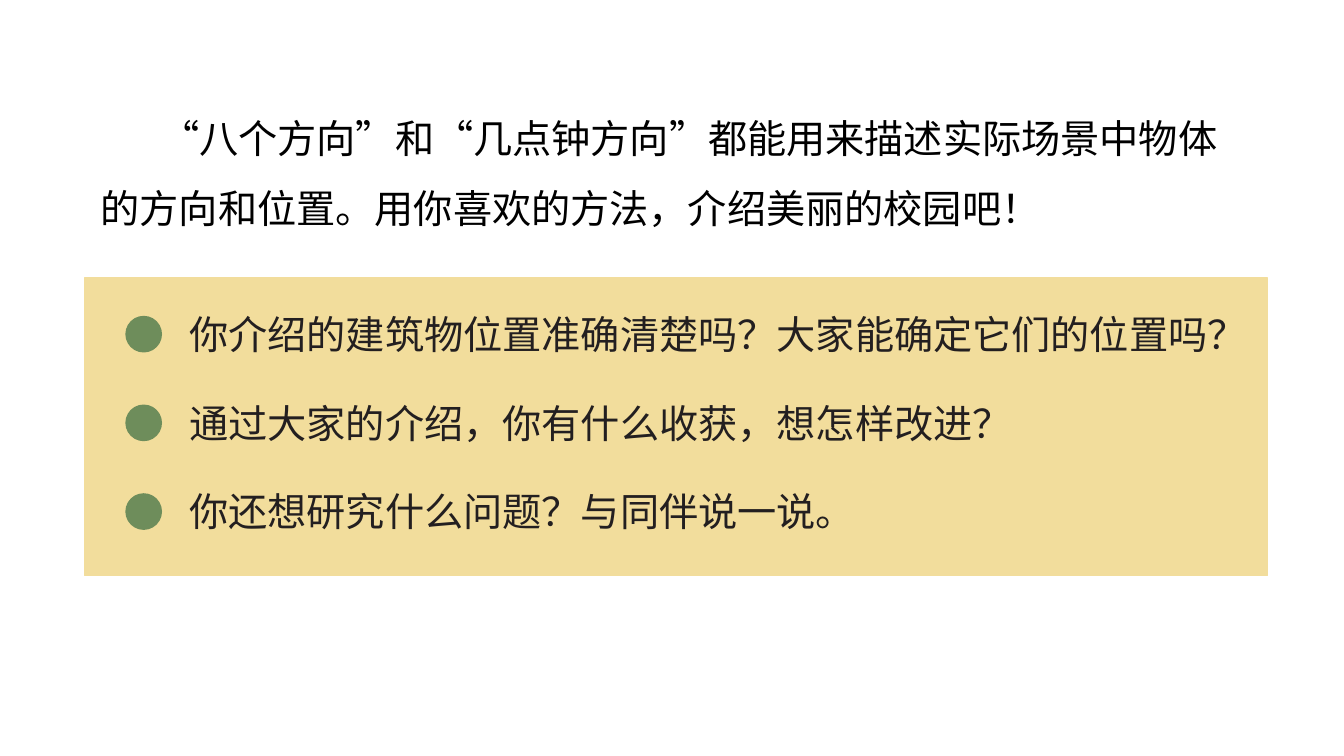
from itertools import groupby

from lxml import etree
from pptx import Presentation
from pptx.dml.color import RGBColor
from pptx.enum import shapes, text
from pptx.oxml.ns import qn
from pptx.util import Inches, Pt

HAN_FONT = "Noto Sans CJK SC"
LATIN_FONT = "Times New Roman"


def paint(shape, color):
    shape.shadow.inherit = False
    shape.fill.solid()
    shape.fill.fore_color.rgb = RGBColor.from_string(color)
    shape.line.color.rgb = RGBColor.from_string(color)
    shape.line.width = Pt(1)


def write(paragraph, words, font_name, color):
    run = paragraph.add_run()
    run.text = words
    for key, value in {"size": Pt(28), "name": font_name}.items():
        setattr(run.font, key, value)
    run.font.color.rgb = RGBColor.from_string(color)
    latin = run.font._element.find(qn("a:latin"))
    east_asian = etree.Element(qn("a:ea"), typeface=HAN_FONT)
    latin.addnext(east_asian)


deck = Presentation()
deck.slide_width, deck.slide_height = Inches(13.33), Inches(7.5)
slide = deck.slides.add_slide(deck.slide_layouts[6])

task = slide.shapes.add_textbox(Inches(0.9), Inches(0.85), Inches(11.59), Inches(2.28))
task.text_frame.word_wrap = True
task_paragraph = task.text_frame.paragraphs[0]
task_paragraph.line_spacing = 1.5
task_paragraph._p.get_or_add_pPr().set("indent", str(Inches(0.59)))
task_words = "“八个方向”和“几点钟方向”都能用来描述实际场景中物体的方向和位置。用你喜欢的方法，介绍美丽的校园吧！"
for is_quote, letters in groupby(task_words, lambda letter: letter in "“”"):
    write(task_paragraph, "".join(letters), HAN_FONT if is_quote else LATIN_FONT, "000000")

panel = slide.shapes.add_shape(
    shapes.MSO_SHAPE.RECTANGLE, Inches(0.84), Inches(2.76), Inches(11.73), Inches(2.95))
paint(panel, "F2DD9C")

questions = [
    "你介绍的建筑物位置准确清楚吗？大家能确定它们的位置吗？",
    "通过大家的介绍，你有什么收获，想怎样改进？",
    "你还想研究什么问题？与同伴说一说。",
]
for row, question_words in enumerate(questions):
    top = 3.03 + 0.88 * row
    dot = slide.shapes.add_shape(
        shapes.MSO_SHAPE.OVAL, Inches(1.25), Inches(top + 0.11), Inches(0.35), Inches(0.35))
    paint(dot, "6E8D5B")
    question = slide.shapes.add_textbox(Inches(1.78), Inches(top), Inches(10.71), Inches(0.57))
    question.text_frame.word_wrap = True
    question.text_frame.auto_size = text.MSO_AUTO_SIZE.SHAPE_TO_FIT_TEXT
    write(question.text_frame.paragraphs[0], question_words, HAN_FONT, "231F20")

deck.save("out.pptx")
